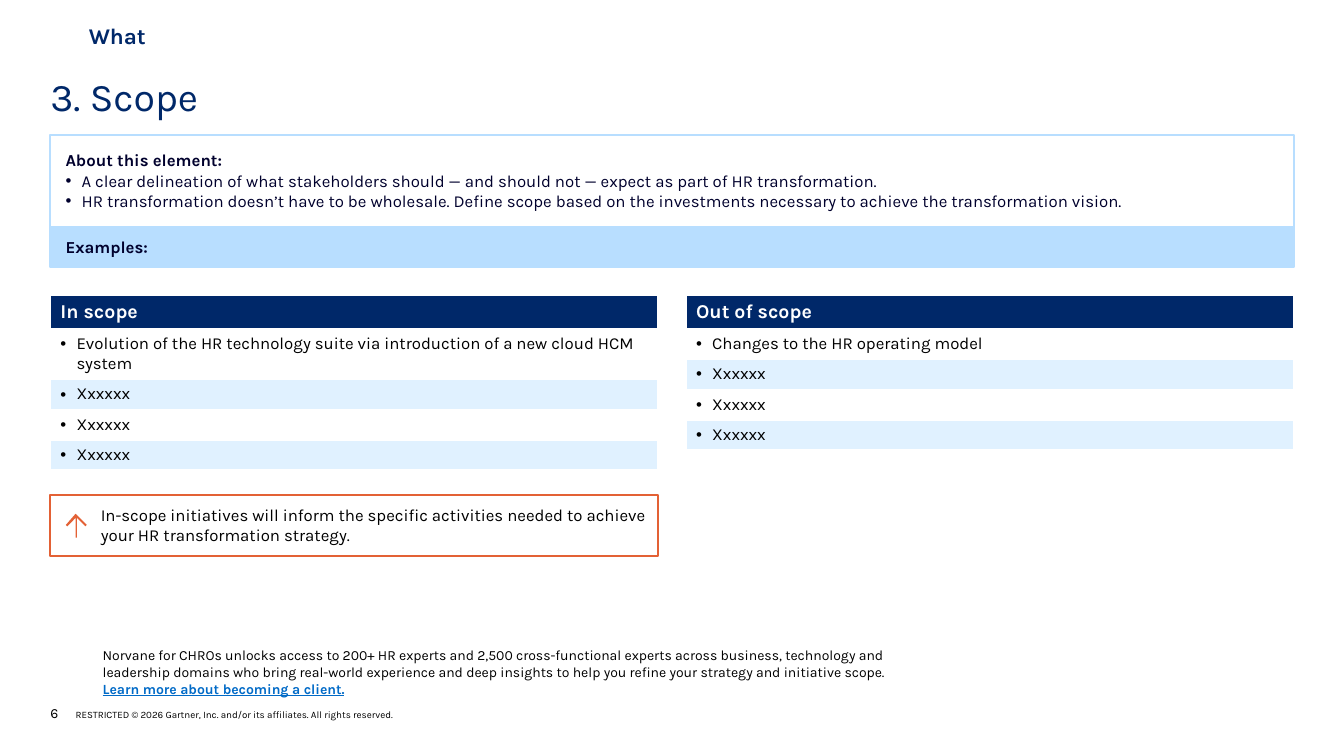
"""Build the HR transformation scope slide."""
from dataclasses import dataclass

from lxml.etree import SubElement
from pptx import Presentation
from pptx.dml.color import RGBColor
from pptx.enum.shapes import MSO_SHAPE
from pptx.enum.text import MSO_ANCHOR
from pptx.oxml.ns import qn
from pptx.util import Pt

TITLE = "3. Scope"
SECTION = "What"
ABOUT = [
    "About this element:",
    "A clear delineation of what stakeholders should — and should not — expect as part of HR transformation.",
    "HR transformation doesn’t have to be wholesale. Define scope based on the investments necessary "
    "to achieve the transformation vision.",
]
EXAMPLES = "Examples:"
SCOPE_TABLES = [
    ("In scope", ["Evolution of the HR technology suite via introduction of a new cloud HCM system",
                  "Xxxxxx", "Xxxxxx", "Xxxxxx"]),
    ("Out of scope", ["Changes to the HR operating model", "Xxxxxx", "Xxxxxx", "Xxxxxx"]),
]
CALLOUT = ("In-scope initiatives will inform the specific activities needed to achieve "
           "your HR transformation strategy.")
PROMOTION = [
    "Norvane for CHROs unlocks access to 200+ HR experts and 2,500 cross-functional experts across business, "
    "technology and leadership domains who bring real-world experience and deep insights to help you refine "
    "your strategy and initiative scope.",
    "Learn more about becoming a client.",
]
PAGE_NUMBER = "6"
COPYRIGHT = "\tRESTRICTED © 2026 Gartner, Inc. and/or its affiliates. All rights reserved."


@dataclass(frozen=True)
class Theme:
    """Colours, type sizes and font."""
    font: str = "Karla"
    navy: str = "002869"
    ink: str = "00002D"
    black: str = "000000"
    white: str = "FFFFFF"
    sky: str = "B8DEFF"
    pale: str = "E0F1FF"
    orange: str = "E36135"
    link: str = "006AC7"
    title: float = 28
    section: float = 16
    heading: float = 14
    body: float = 12
    note: float = 10
    legal: float = 7
    rule: float = 1.5


THEME = Theme()
MARGIN, CONTENT_WIDTH = 36, 888
TABLE_WIDTH, TABLE_TOP = 434, 211
HEADER_HEIGHT, ROW_HEIGHT = 23.6, 21.6
HANGING = 11.5
ARROW_TIP = (54.5, 367.4)
ARROW_HALF = [(0, 0), (7.9, 7.6), (6.7, 8.7), (0.8, 2.7), (0.8, 16.8)]


def colour(value):
    return RGBColor.from_string(value)


def style(para, size, ink, bold=False, underline=False):
    for span in para.runs:
        font = span.font
        font.name, font.size, font.bold = THEME.font, Pt(size), bold
        font.underline = underline
        font.color.rgb = colour(ink)


def hang(para, distance, bullet=False):
    properties = para._p.get_or_add_pPr()
    properties.set("marL", str(Pt(distance)))
    properties.set("indent", str(-Pt(distance)))
    if bullet:
        SubElement(properties, qn("a:buFont")).set("typeface", "Arial")
        SubElement(properties, qn("a:buChar")).set("char", "•")


def set_text(frame, lines, size, ink, bold=False, insets=(0, 0, 0, 0), anchor=MSO_ANCHOR.TOP):
    frame.text = "\n".join(lines)
    frame.word_wrap = True
    frame.vertical_anchor = anchor
    frame.margin_left, frame.margin_top, frame.margin_right, frame.margin_bottom = map(Pt, insets)
    for para in frame.paragraphs:
        para.alignment = 1
        style(para, size, ink, bold)
    return frame.paragraphs


def add_text(page, bounds, *content, **options):
    box = page.shapes.add_textbox(*map(Pt, bounds))
    return set_text(box.text_frame, *content, **options)


def add_panel(page, bounds, line, fill, *content, **options):
    panel = page.shapes.add_shape(MSO_SHAPE.RECTANGLE, *map(Pt, bounds))
    panel.shadow.inherit = False
    if fill:
        panel.fill.solid()
        panel.fill.fore_color.rgb = colour(fill)
    else:
        panel.fill.background()
    panel.line.color.rgb = colour(line)
    panel.line.width = Pt(THEME.rule)
    return set_text(panel.text_frame, *content, **options)


def paint_cell(cell, fill, sides):
    properties = cell._tc.get_or_add_tcPr()
    for side in sides:
        border = SubElement(properties, qn(f"a:ln{side}"), w=str(Pt(THEME.rule)))
        SubElement(SubElement(border, qn("a:solidFill")), qn("a:srgbClr"), val=THEME.white)
    cell.fill.solid()
    cell.fill.fore_color.rgb = colour(fill)


def add_scope_table(page, left, heading, items):
    height = HEADER_HEIGHT + ROW_HEIGHT * len(items)
    table = page.shapes.add_table(len(items) + 1, 1, Pt(left), Pt(TABLE_TOP), Pt(TABLE_WIDTH), Pt(height)).table
    for index, text in enumerate([heading, *items]):
        cell = table.cell(index, 0)
        para = cell.text_frame.paragraphs[0]
        para.text = text
        if index == 0:
            table.rows[index].height = Pt(HEADER_HEIGHT)
            paint_cell(cell, THEME.navy, "B")
            style(para, THEME.heading, THEME.white, bold=True)
        else:
            table.rows[index].height = Pt(ROW_HEIGHT)
            paint_cell(cell, THEME.white if index % 2 else THEME.pale, "LRTB")
            hang(para, HANGING, bullet=True)
            style(para, THEME.body, THEME.black)


def add_arrow(page):
    x, y = ARROW_TIP
    right = [(x + across, y + down) for across, down in ARROW_HALF]
    left = [(x - across, y + down) for across, down in reversed(ARROW_HALF[1:])]
    builder = page.shapes.build_freeform(x, y, scale=Pt(1))
    builder.add_line_segments(right[1:] + left, close=True)
    arrow = builder.convert_to_shape()
    arrow.shadow.inherit = False
    arrow.fill.solid()
    arrow.fill.fore_color.rgb = colour(THEME.orange)
    arrow.line.fill.background()


def main():
    deck = Presentation()
    deck.slide_width, deck.slide_height = Pt(960), Pt(540)
    page = deck.slides.add_slide(deck.slide_layouts[6])

    add_text(page, (63.4, 18, 206, 15), [SECTION], THEME.section, THEME.navy, bold=True, anchor=MSO_ANCHOR.MIDDLE)
    add_text(page, (MARGIN, 52, CONTENT_WIDTH, 35), [TITLE], THEME.title, THEME.navy)

    about = add_panel(page, (MARGIN, 96.5, CONTENT_WIDTH, 65.5), THEME.sky, None, ABOUT,
                      THEME.body, THEME.ink, insets=(10.8,) * 4)
    style(about[0], THEME.body, THEME.ink, bold=True)
    for para in about[1:]:
        hang(para, HANGING, bullet=True)
    add_panel(page, (MARGIN, 162, CONTENT_WIDTH, 28.8), THEME.sky, THEME.sky, [EXAMPLES],
              THEME.body, THEME.ink, bold=True, insets=(10.8, 7.2, 10.8, 7.2))

    step = CONTENT_WIDTH - TABLE_WIDTH
    for index, (heading, items) in enumerate(SCOPE_TABLES):
        add_scope_table(page, MARGIN + index * step, heading, items)

    add_panel(page, (MARGIN, 353.5, TABLE_WIDTH, 43.6), THEME.orange, None, [CALLOUT],
              THEME.body, THEME.black, insets=(36, 7.2, 7.2, 7.2))
    add_arrow(page)

    promotion = add_text(page, (73.4, 461.8, 559, 36), PROMOTION, THEME.note, THEME.black)
    style(promotion[1], THEME.note, THEME.link, bold=True, underline=True)

    footer = add_text(page, (MARGIN, 503.5, 575, 12), [PAGE_NUMBER], THEME.note, THEME.black,
                      anchor=MSO_ANCHOR.BOTTOM)[0]
    hang(footer, 18)
    legal = footer.add_run()
    legal.text = COPYRIGHT
    style(footer, THEME.legal, THEME.black)
    footer.runs[0].font.size = Pt(THEME.note)

    deck.save("out.pptx")


if __name__ == "__main__":
    main()
